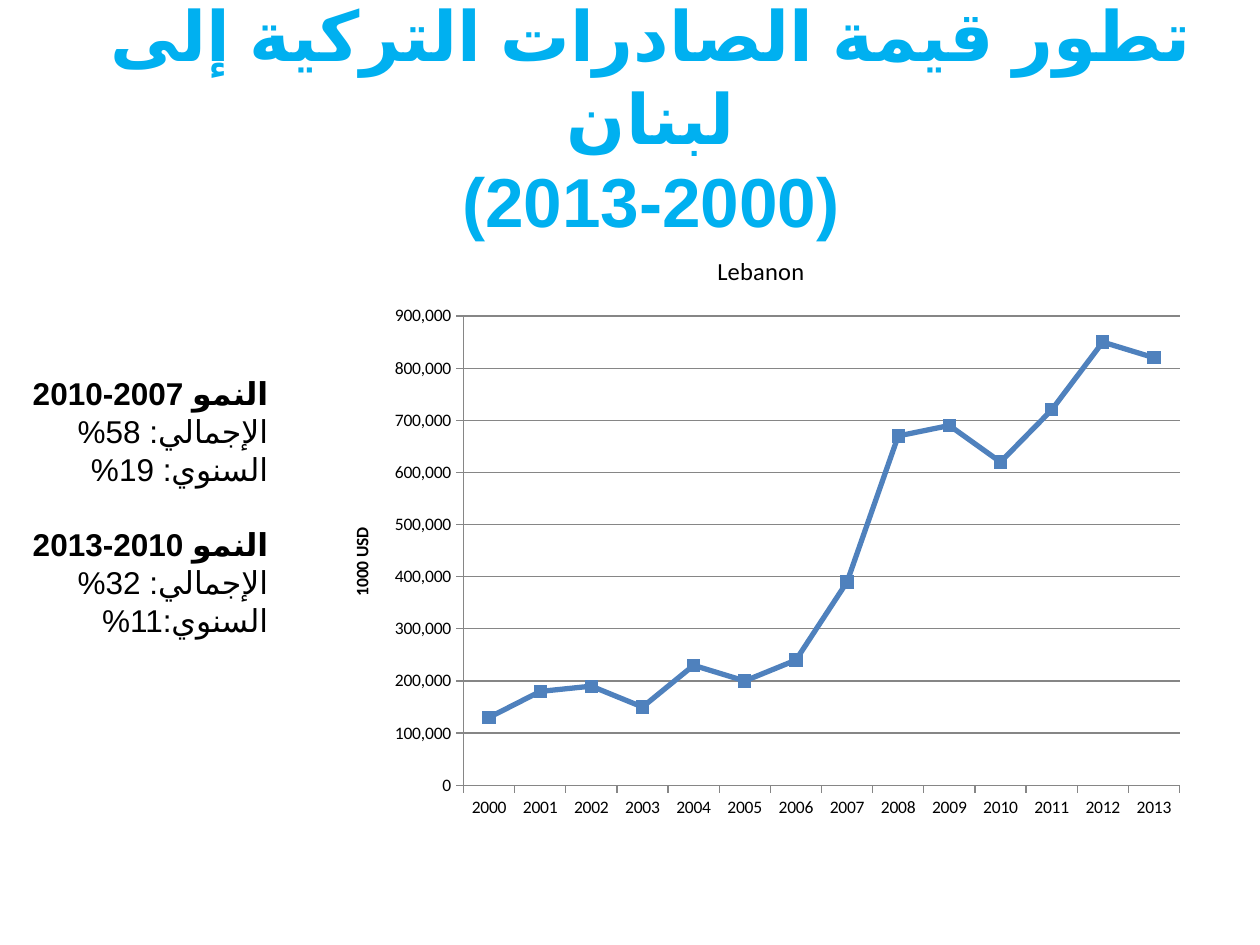
"""Build a slide on the growth of Turkish exports to Lebanon, 2000-2013."""
import pptx
import pptx.chart.data
import pptx.dml.color
import pptx.enum.chart
import pptx.enum.text
import pptx.oxml
import pptx.oxml.ns
import pptx.util

Cm = pptx.util.Cm
Pt = pptx.util.Pt
SKY = pptx.dml.color.RGBColor(0x00, 0xB0, 0xF0)
BLACK = pptx.dml.color.RGBColor(0x00, 0x00, 0x00)
BLUE = pptx.dml.color.RGBColor(0x4F, 0x81, 0xBD)
GREY = pptx.dml.color.RGBColor(0x86, 0x86, 0x86)
FONT = "Calibri"
ARABIC_FONT = "Arial"

HEADING = ["تطور قيمة الصادرات التركية إلى لبنان", "(2000-2013)"]
GROWTH = [
    ("النمو 2007-2010", ["الإجمالي:\t 58%", "السنوي:\t 19%"]),
    ("النمو 2010-2013", ["الإجمالي: \t32%", "السنوي:\t11%"]),
]
COUNTRY = "Lebanon"
UNIT = "1000 USD"
FIRST_YEAR = 2000
EXPORTS = [130000, 180000, 190000, 150000, 230000, 200000, 240000,
           390000, 670000, 690000, 620000, 720000, 850000, 820000]


def style_font(font, size, color, bold):
    font.name = FONT
    font.size = Pt(size)
    font.bold = bold
    font.color.rgb = color


def add_arabic_run(paragraph, text, size, color, bold):
    run = paragraph.add_run()
    run.text = text
    style_font(run.font, size, color, bold)
    properties = run._r.get_or_add_rPr()
    properties.set("lang", "ar-LB")
    complex_font = pptx.oxml.parse_xml(
        f'<a:cs {pptx.oxml.ns.nsdecls("a")} typeface="{ARABIC_FONT}"/>')
    properties.append(complex_font)


def set_rtl(paragraph, alignment):
    paragraph.alignment = alignment
    paragraph._p.get_or_add_pPr().set("rtl", "1")


def add_heading(slide):
    heading = slide.shapes.title
    heading.left, heading.top = Cm(1.27), Cm(0.76)
    heading.width, heading.height = Cm(23.7), Cm(3.18)
    frame = heading.text_frame
    frame.auto_size = pptx.enum.text.MSO_AUTO_SIZE.NONE
    frame.vertical_anchor = pptx.enum.text.MSO_ANCHOR.MIDDLE
    paragraph = frame.paragraphs[0]
    set_rtl(paragraph, pptx.enum.text.PP_ALIGN.CENTER)
    for index, line in enumerate(HEADING):
        if index:
            paragraph.add_line_break()
        add_arabic_run(paragraph, line, 39.6, SKY, True)


def add_growth(slide):
    growth = slide.shapes.add_textbox(Cm(-0.64), Cm(7.42), Cm(6.3), Cm(5.64))
    frame = growth.text_frame
    frame.word_wrap = True
    for group, (period, rates) in enumerate(GROWTH):
        for row, line in enumerate([period] + rates):
            first = group == 0 and row == 0
            paragraph = frame.paragraphs[0] if first else frame.add_paragraph()
            set_rtl(paragraph, pptx.enum.text.PP_ALIGN.RIGHT)
            if group and row == 0:
                paragraph.space_before = Pt(21.6)
            add_arabic_run(paragraph, line, 18, BLACK, row == 0)


def add_chart_title(owner, text, size, bold):
    paragraph = owner.text_frame.paragraphs[0]
    run = paragraph.add_run()
    run.text = text
    style_font(run.font, size, BLACK, bold)


def add_exports_chart(slide):
    data = pptx.chart.data.CategoryChartData(number_format="#,##0")
    data.categories = [str(FIRST_YEAR + n) for n in range(len(EXPORTS))]
    data.add_series(COUNTRY, EXPORTS)
    chart = slide.shapes.add_chart(
        pptx.enum.chart.XL_CHART_TYPE.LINE_MARKERS,
        Cm(6.55), Cm(4.65), Cm(17.58), Cm(12.07), data).chart
    style_font(chart.font, 10, BLACK, False)
    chart.has_legend = False
    chart.has_title = True
    add_chart_title(chart.chart_title, COUNTRY, 14, False)

    years, values = chart.category_axis, chart.value_axis
    for axis in (years, values):
        axis.format.line.color.rgb = GREY
        axis.major_tick_mark = pptx.enum.chart.XL_TICK_MARK.OUTSIDE
        axis.minor_tick_mark = pptx.enum.chart.XL_TICK_MARK.NONE
    values.minimum_scale, values.maximum_scale = 0, 900000
    values.major_unit = 100000
    values.tick_labels.number_format = "#,##0"
    values.tick_labels.number_format_is_linked = False
    values.has_major_gridlines = True
    values.major_gridlines.format.line.color.rgb = GREY
    values.has_title = True
    add_chart_title(values.axis_title, UNIT, 10, True)

    chart.plots[0].vary_by_categories = False
    exports = chart.plots[0].series[0]
    exports.smooth = False
    exports.format.line.color.rgb = BLUE
    exports.format.line.width = Pt(3)
    exports.marker.style = pptx.enum.chart.XL_MARKER_STYLE.SQUARE
    exports.marker.size = 7
    exports.marker.format.fill.solid()
    exports.marker.format.fill.fore_color.rgb = BLUE
    exports.marker.format.line.color.rgb = BLUE


def main():
    deck = pptx.Presentation()
    deck.slide_width, deck.slide_height = Cm(25.4), Cm(19.05)
    slide = deck.slides.add_slide(deck.slide_layouts[5])
    add_heading(slide)
    add_growth(slide)
    add_exports_chart(slide)
    deck.save("out.pptx")


if __name__ == "__main__":
    main()
